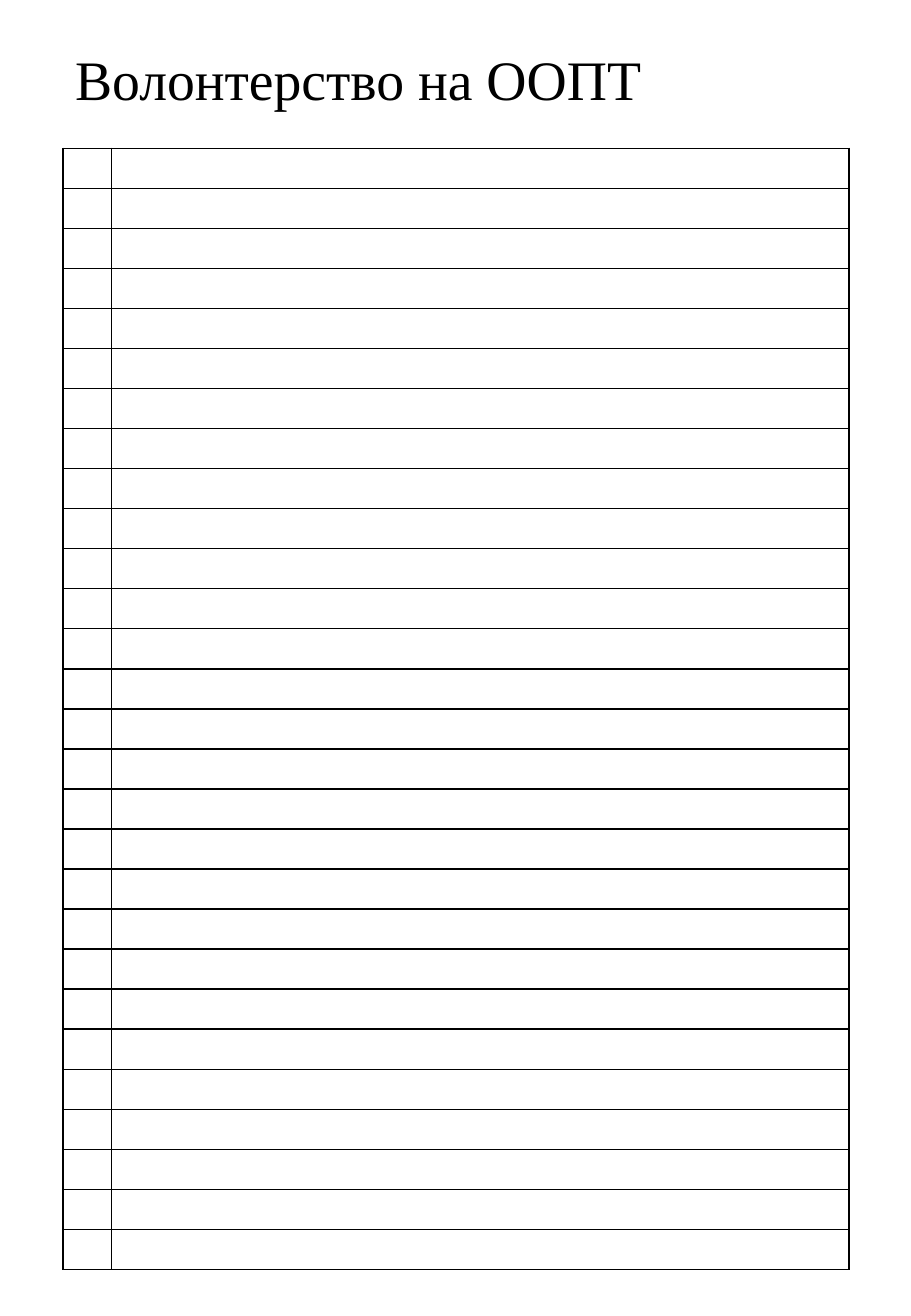
from dataclasses import dataclass

from lxml.etree import SubElement
from pptx import Presentation
from pptx.dml.color import RGBColor as RGB
from pptx.enum.text import MSO_ANCHOR as Anchor
from pptx.oxml.ns import qn
from pptx.slide import Slide
from pptx.table import _Cell as Cell
from pptx.util import Pt

BLACK = RGB(0x00, 0x00, 0x00)
WHITE = RGB(0xFF, 0xFF, 0xFF)
FONT = "Times New Roman"
ROWS = 28
COLS = (28.8, 437.04)
SIDES = ("lnL", "lnR", "lnT", "lnB")
MARGINS = ("margin_left", "margin_right", "margin_top", "margin_bottom")


@dataclass(frozen=True)
class Box:
    left: float
    top: float
    width: float
    height: float

    def place(self) -> tuple[Pt, Pt, Pt, Pt]:
        """Give the box as left, top, width and height lengths."""
        return Pt(self.left), Pt(self.top), Pt(self.width), Pt(self.height)


TITLE = Box(37.44, 10.08, 465.84, 77.76)
GRID = Box(37.44, 87.84, sum(COLS), 664.5)


def add_title(slide: Slide, box: Box, text: str) -> None:
    frame = slide.shapes.add_textbox(*box.place()).text_frame
    frame.word_wrap = True
    frame.vertical_anchor = Anchor.MIDDLE
    para = frame.paragraphs[0]
    para.line_spacing = 0.9
    run = para.add_run()
    run.text = text
    style = {"name": FONT, "size": Pt(33)}
    for key, value in style.items():
        setattr(run.font, key, value)
    run.font.color.rgb = BLACK


def style_cell(cell: Cell) -> None:
    """Give the cell a white fill, no margins and thin black borders."""
    for name in MARGINS:
        setattr(cell, name, Pt(0))
    props = cell._tc.get_or_add_tcPr()
    for side in SIDES:
        line = SubElement(props, qn(f"a:{side}"), w=str(Pt(1)))
        fill = SubElement(line, qn("a:solidFill"))
        SubElement(fill, qn("a:srgbClr"), val=str(BLACK))
    cell.fill.solid()
    cell.fill.fore_color.rgb = WHITE


def add_grid(slide: Slide, box: Box) -> None:
    table = slide.shapes.add_table(ROWS, len(COLS), *box.place()).table
    table.first_row = table.horz_banding = False
    for col, width in zip(table.columns, COLS):
        col.width = Pt(width)
    for row in table.rows:
        row.height = Pt(box.height / ROWS)
    for cell in table.iter_cells():
        style_cell(cell)


def main() -> None:
    deck = Presentation()
    deck.slide_width, deck.slide_height = Pt(540), Pt(779.76)
    slide = deck.slides.add_slide(deck.slide_layouts[6])
    add_title(slide, TITLE, "Волонтерство на ООПТ")
    add_grid(slide, GRID)
    deck.save("out.pptx")


if __name__ == "__main__":
    main()
